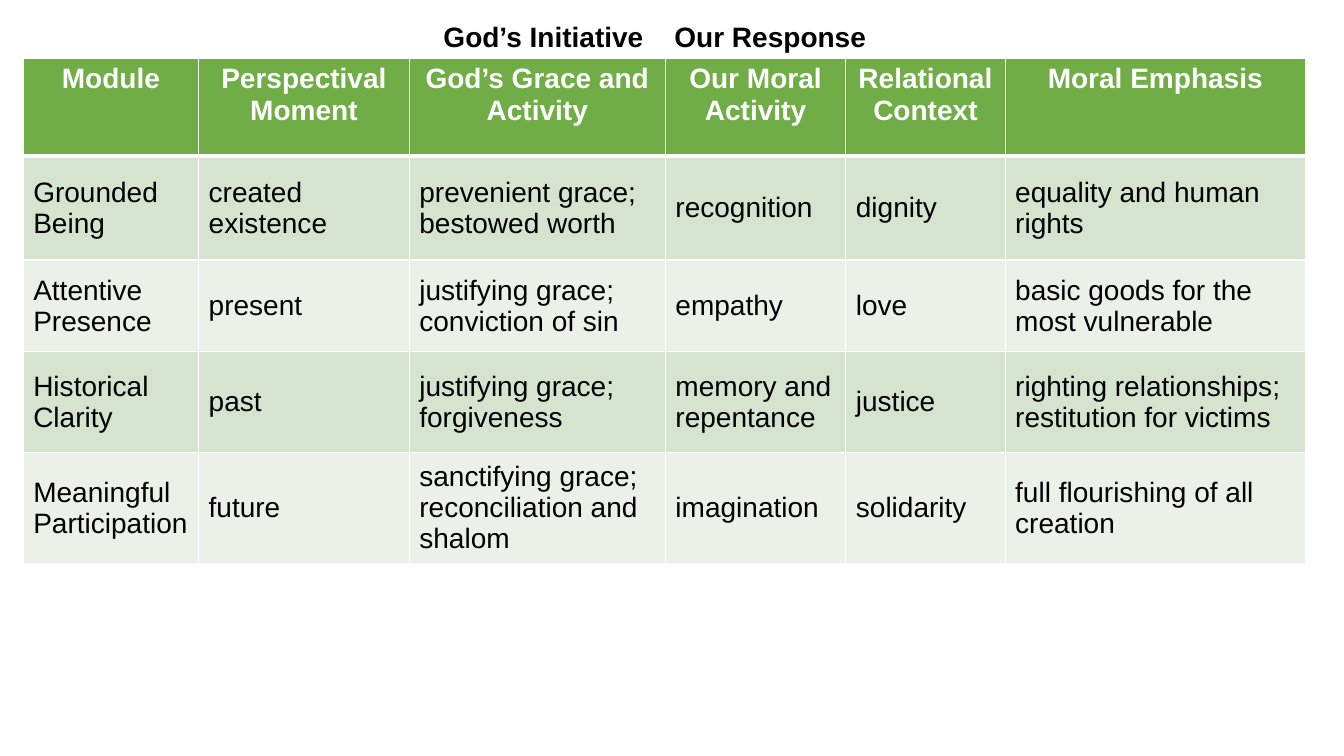
from dataclasses import dataclass

from lxml import etree
from pptx import Presentation
from pptx.dml.color import RGBColor
from pptx.enum.text import MSO_ANCHOR, PP_ALIGN
from pptx.oxml.ns import qn
from pptx.util import Inches, Pt

CENTER, LEFT = PP_ALIGN.CENTER, PP_ALIGN.LEFT
TOP, MIDDLE = MSO_ANCHOR.TOP, MSO_ANCHOR.MIDDLE
BLANK_LAYOUT = 6


@dataclass(frozen=True)
class Theme:
    font: str = "Arial"
    size: int = 20
    text: str = "000000"
    header_text: str = "FFFFFF"
    header_fill: str = "70AD47"
    bands: tuple = ("D5E3CF", "EBF1E9")
    border: str = "FFFFFF"
    border_width: int = 1
    header_rule: int = 3


THEME = Theme()

COLUMN_WIDTHS = [1.74, 2.09, 2.54, 1.79, 1.58, 2.98]
ROW_HEIGHTS = [0.97, 1.03, 0.91, 1, 1.1]
MODULE_ROWS = [
    ["Module", "Perspectival Moment", "God’s Grace and Activity",
     "Our Moral Activity", "Relational Context", "Moral Emphasis"],
    ["Grounded Being", "created existence", "prevenient grace; bestowed worth",
     "recognition", "dignity", "equality and human rights"],
    ["Attentive Presence", "present", "justifying grace; conviction of sin",
     "empathy", "love", "basic goods for the most vulnerable"],
    ["Historical Clarity", "past", "justifying grace; forgiveness",
     "memory and repentance", "justice",
     "righting relationships; restitution for victims"],
    ["Meaningful Participation", "future",
     "sanctifying grace; reconciliation and shalom",
     "imagination", "solidarity", "full flourishing of all creation"],
]
COLUMN_GROUPS = ["God’s Initiative", "Our Response"]


def write_text(text_frame, text, color=THEME.text, bold=False, align=LEFT):
    text_frame.word_wrap = True
    paragraph = text_frame.paragraphs[0]
    paragraph.alignment = align
    run = paragraph.add_run()
    run.text = text
    run.font.name = THEME.font
    run.font.size = Pt(THEME.size)
    run.font.bold = bold
    run.font.color.rgb = RGBColor.from_string(color)


def set_borders(cell, top, bottom):
    """Draw the four cell edges; top and bottom are widths in points."""
    properties = cell._tc.get_or_add_tcPr()
    side = THEME.border_width
    for edge, width in (("L", side), ("R", side), ("T", top), ("B", bottom)):
        line = etree.SubElement(properties, qn(f"a:ln{edge}"), w=str(Pt(width)))
        fill = etree.SubElement(line, qn("a:solidFill"))
        etree.SubElement(fill, qn("a:srgbClr"), val=THEME.border)


def fill_cell(cell, text, row_index):
    is_header = row_index == 0
    set_borders(
        cell,
        top=THEME.header_rule if row_index == 1 else THEME.border_width,
        bottom=THEME.header_rule if is_header else THEME.border_width,
    )
    band = THEME.bands[(row_index - 1) % len(THEME.bands)]
    cell.fill.solid()
    cell.fill.fore_color.rgb = RGBColor.from_string(
        THEME.header_fill if is_header else band)
    cell.vertical_anchor = TOP if is_header else MIDDLE
    write_text(
        cell.text_frame, text, bold=is_header,
        color=THEME.header_text if is_header else THEME.text,
        align=CENTER if is_header else LEFT,
    )


def add_module_table(slide, left, top):
    table = slide.shapes.add_table(
        len(ROW_HEIGHTS), len(COLUMN_WIDTHS), Inches(left), Inches(top),
        Inches(sum(COLUMN_WIDTHS)), Inches(sum(ROW_HEIGHTS))).table
    for column, width in zip(table.columns, COLUMN_WIDTHS):
        column.width = Inches(width)
    for row_index, (row, texts) in enumerate(zip(table.rows, MODULE_ROWS)):
        row.height = Inches(ROW_HEIGHTS[row_index])
        for cell, text in zip(row.cells, texts):
            fill_cell(cell, text, row_index)


def add_group_labels(slide, left, top, width, height):
    """Set the column group names side by side in equal shares of the box."""
    share = width / len(COLUMN_GROUPS)
    for index, text in enumerate(COLUMN_GROUPS):
        label = slide.shapes.add_textbox(
            Inches(left + index * share), Inches(top),
            Inches(share), Inches(height))
        write_text(label.text_frame, text, bold=True)


def main():
    presentation = Presentation()
    presentation.slide_width = Inches(13.33)
    presentation.slide_height = Inches(7.5)
    slide = presentation.slides.add_slide(
        presentation.slide_layouts[BLANK_LAYOUT])
    add_module_table(slide, left=0.23, top=0.58)
    add_group_labels(slide, left=4.3, top=0.14, width=4.58, height=0.44)
    presentation.save("out.pptx")


if __name__ == "__main__":
    main()
